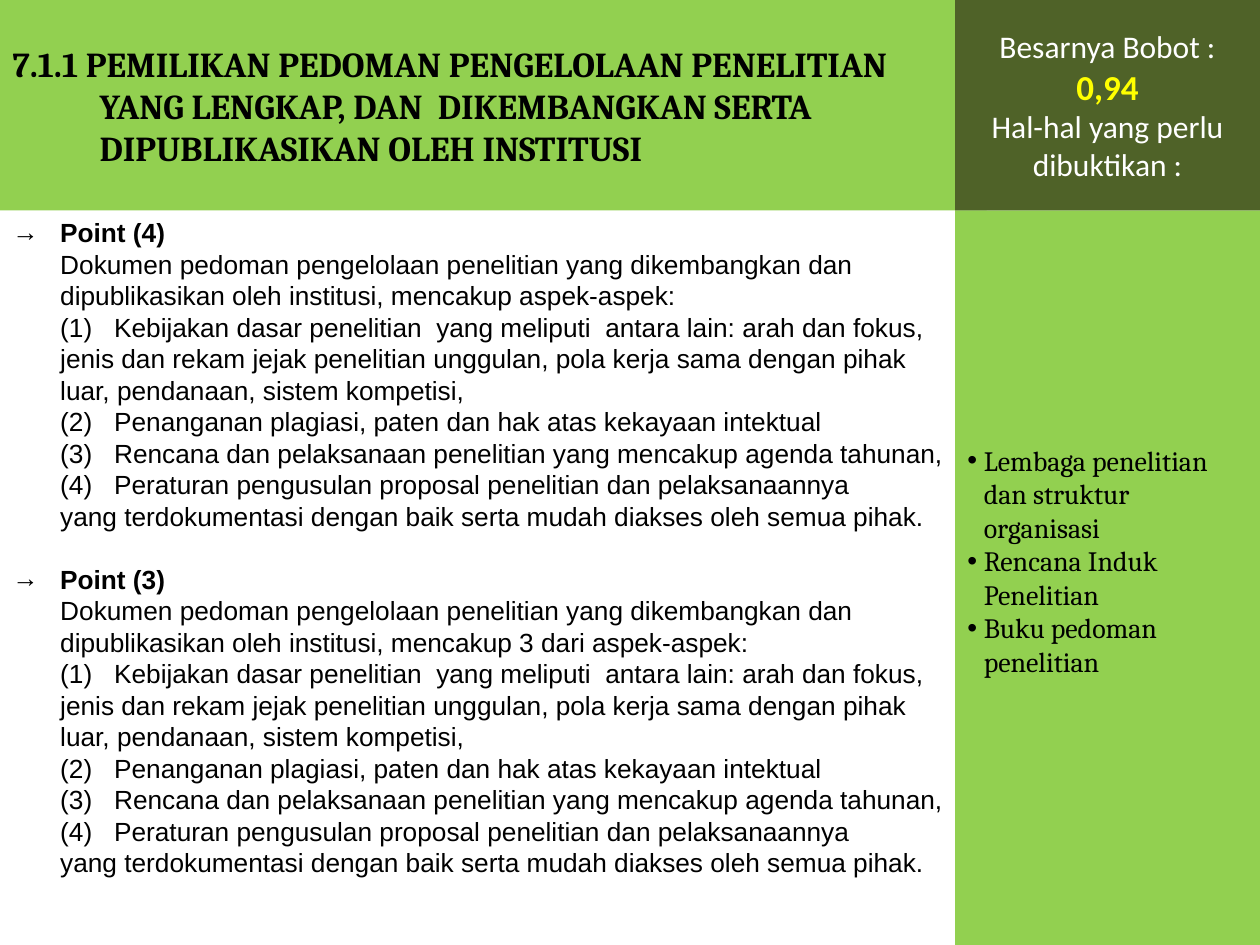
from lxml import etree
from pptx import Presentation
from pptx.dml.color import RGBColor
from pptx.enum.shapes import MSO_SHAPE as Shape
from pptx.enum.text import MSO_ANCHOR as Anchor, MSO_AUTO_SIZE as AutoSize, PP_ALIGN as Align
from pptx.oxml.ns import qn
from pptx.util import Inches, Pt

GREEN = RGBColor(0x92, 0xD0, 0x50)
OLIVE = RGBColor(0x4F, 0x62, 0x28)
BLACK = RGBColor(0, 0, 0)
WHITE = RGBColor(255, 255, 255)
YELLOW = RGBColor(255, 255, 0)

# Content
TITLE = ("7.1.1 PEMILIKAN PEDOMAN PENGELOLAAN PENELITIAN YANG LENGKAP, DAN  "
         "DIKEMBANGKAN SERTA DIPUBLIKASIKAN OLEH INSTITUSI")
POINTS = [("Point (4)", "aspek-aspek:"), ("Point (3)", "3 dari aspek-aspek:")]
INTRO = ("Dokumen pedoman pengelolaan penelitian yang dikembangkan dan "
         "dipublikasikan oleh institusi, mencakup ")
ASPECTS = [
    "Kebijakan dasar penelitian  yang meliputi  antara lain: arah dan fokus, jenis dan rekam "
    "jejak penelitian unggulan, pola kerja sama dengan pihak luar, pendanaan, sistem kompetisi,",
    "Penanganan plagiasi, paten dan hak atas kekayaan intektual",
    "Rencana dan pelaksanaan penelitian yang mencakup agenda tahunan,",
    "Peraturan pengusulan proposal penelitian dan pelaksanaannya",
]
CLOSING = "yang terdokumentasi dengan baik serta mudah diakses oleh semua pihak."
EVIDENCE = ["Lembaga penelitian dan struktur organisasi", "Rencana Induk Penelitian",
            "Buku pedoman penelitian"]
WEIGHT_LABEL, WEIGHT = "Besarnya Bobot : ", "0,94"
EVIDENCE_LABEL = "Hal-hal yang perlu dibuktikan :"

# Layout
WIDTH, HEIGHT = 10, 7.5
HEADER = 1.67
SIDE = 7.58


def add_span(para, text, font="Calibri", size=18, color=BLACK, bold=False):
    span = para.add_run()
    span.text = text
    span.font.name, span.font.size = font, Pt(size)
    span.font.color.rgb, span.font.bold = color, bold


def add_para(frame, text, bullet=None, left=0, hanging=0, align=Align.LEFT,
             before=0, line=None, **font):
    """Add a paragraph, using the frame's first one while it is still empty."""
    first = frame.paragraphs[0]
    para = frame.add_paragraph() if first.runs else first
    para.alignment, para.space_before, para.space_after = align, Pt(before), Pt(0)
    if line:
        para.line_spacing = Pt(line)
    props = para._p.get_or_add_pPr()
    props.set("marL", str(Inches(left)))
    props.set("indent", str(-Inches(hanging)))
    if bullet:
        etree.SubElement(props, qn("a:buFont")).set("typeface", "Arial")
        etree.SubElement(props, qn("a:buChar")).set("char", bullet)
    add_span(para, text, **font)
    return para


def set_frame(box, anchor):
    frame = box.text_frame
    frame.word_wrap, frame.auto_size = True, AutoSize.NONE
    frame.vertical_anchor = anchor
    return frame


def add_panel(page, left, top, width, height, color):
    panel = page.shapes.add_shape(Shape.RECTANGLE, Inches(left), Inches(top),
                                  Inches(width), Inches(height))
    panel.shadow.inherit = False
    panel.fill.solid()
    panel.fill.fore_color.rgb = color
    panel.line.fill.background()
    return set_frame(panel, Anchor.MIDDLE)


deck = Presentation()
deck.slide_width, deck.slide_height = Inches(WIDTH), Inches(HEIGHT)
page = deck.slides.add_slide(deck.slide_layouts[5])

# Title band
title = page.shapes.title
title.left, title.top, title.width, title.height = 0, 0, Inches(7.83), Inches(HEADER)
title.fill.solid()
title.fill.fore_color.rgb = GREEN
add_para(set_frame(title, Anchor.MIDDLE), TITLE, left=0.69, hanging=0.69,
         font="Cambria", size=20, bold=True)

# Scoring points
body = page.shapes.add_textbox(0, Inches(HEADER), Inches(7.67), Inches(HEIGHT - HEADER))
frame = set_frame(body, Anchor.TOP)
style = dict(left=0.38, line=18, font="Arial", size=15)
for index, (heading, scope) in enumerate(POINTS):
    add_para(frame, heading, bullet="→", hanging=0.38, before=18 * index, bold=True, **style)
    aspects = [f"({number})   {aspect}" for number, aspect in enumerate(ASPECTS, 1)]
    for text in [INTRO + scope, *aspects, CLOSING]:
        add_para(frame, text, **style)

# Evidence list, set slightly above the middle
frame = add_panel(page, SIDE, HEADER, WIDTH - SIDE, HEIGHT - HEADER, GREEN)
frame.margin_bottom = Inches(0.32)
for item in EVIDENCE:
    add_para(frame, item, bullet="•", left=0.13, hanging=0.13, font="Cambria", size=16)

# Weight panel
frame = add_panel(page, SIDE, 0, WIDTH - SIDE, HEADER, OLIVE)
para = add_para(frame, WEIGHT_LABEL, align=Align.CENTER, color=WHITE)
add_span(para, WEIGHT, size=20, color=YELLOW, bold=True)
add_para(frame, EVIDENCE_LABEL, align=Align.CENTER, color=WHITE)

deck.save("out.pptx")
